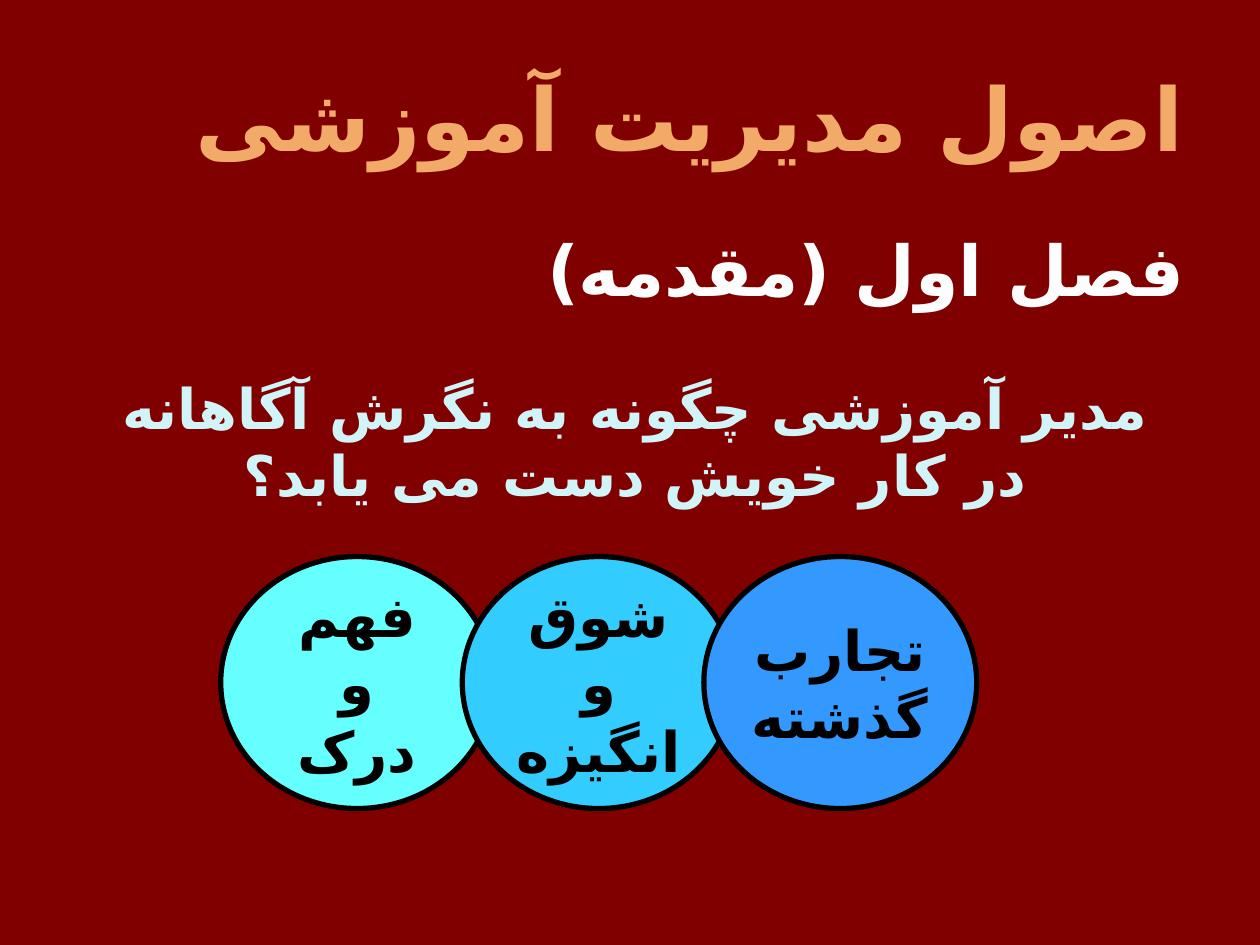
from lxml import etree
from pptx import Presentation
from pptx.dml.color import RGBColor
from pptx.enum.shapes import MSO_SHAPE
from pptx.enum.text import MSO_ANCHOR, PP_ALIGN
from pptx.oxml.ns import qn
from pptx.util import Cm, Pt

OVAL = MSO_SHAPE.OVAL
TOP, MIDDLE = MSO_ANCHOR.TOP, MSO_ANCHOR.MIDDLE
RIGHT, CENTER = PP_ALIGN.RIGHT, PP_ALIGN.CENTER

FONT = "Cabin"
PERSIAN_FONT = "DejaVu Sans"  # Cabin has no Persian letters
COLORS = {
    "background": "800000",
    "title": "F2AA68",
    "chapter": "FDFDFD",
    "question": "D1F4F9",
    "outline": "000000",
    "understanding": "66FFFF",
    "motivation": "33CCFF",
    "experience": "3399FF",
}

# Overlapping circles, left to right
CIRCLES = [
    ("understanding", "فهم\nو\nدرک"),
    ("motivation", "شوق\nو\nانگیزه"),
    ("experience", "تجارب\nگذشته"),
]
CIRCLE_LEFT, CIRCLE_TOP, CIRCLE_STEP = 4.45, 11.22, 4.87
CIRCLE_WIDTH, CIRCLE_HEIGHT = 5.5, 5.08


def color(name):
    return RGBColor.from_string(COLORS[name])


def write_text(shape, text, size, color_name, align, anchor, wrap=True):
    """Fill a shape with bold right-to-left text."""
    frame = shape.text_frame
    frame.text = text
    frame.word_wrap = wrap
    frame.vertical_anchor = anchor
    for para in frame.paragraphs:
        para.alignment = align
        para._p.get_or_add_pPr().set("rtl", "1")
        for span in para.runs:
            span.font.name = FONT
            span.font.size = Pt(size)
            span.font.bold = True
            span.font.color.rgb = color(color_name)
            properties = span._r.get_or_add_rPr()
            properties.set("lang", "fa-IR")
            script_font = etree.SubElement(properties, qn("a:cs"))
            script_font.set("typeface", PERSIAN_FONT)


def add_title(page, text):
    title = page.shapes.title
    title.left, title.top = Cm(1.27), Cm(0.76)
    title.width, title.height = Cm(22.86), Cm(3.18)
    write_text(title, text, 50, "title", RIGHT, MIDDLE)


def add_text(page, text, left, top, width, height, size, color_name, align):
    box = page.shapes.add_textbox(Cm(left), Cm(top), Cm(width), Cm(height))
    write_text(box, text, size, color_name, align, TOP)


def add_circle(page, position, fill_name, text):
    circle = page.shapes.add_shape(
        OVAL, Cm(CIRCLE_LEFT + position * CIRCLE_STEP), Cm(CIRCLE_TOP),
        Cm(CIRCLE_WIDTH), Cm(CIRCLE_HEIGHT))
    circle.shadow.inherit = False
    circle.fill.solid()
    circle.fill.fore_color.rgb = color(fill_name)
    circle.line.color.rgb = color("outline")
    circle.line.width = Pt(3)
    write_text(circle, text, 32, "outline", CENTER, MIDDLE, wrap=False)


def main():
    deck = Presentation()
    deck.slide_width, deck.slide_height = Cm(25.4), Cm(19.05)
    page = deck.slides.add_slide(deck.slide_layouts[5])
    page.background.fill.solid()
    page.background.fill.fore_color.rgb = color("background")

    # Headings
    add_title(page, "اصول مدیریت آموزشی")
    add_text(page, "فصل اول (مقدمه)",
             1.27, 4.45, 22.86, 12.57, 40, "chapter", RIGHT)

    # Three sources of a conscious attitude
    for position, (fill_name, text) in enumerate(CIRCLES):
        add_circle(page, position, fill_name, text)

    # Question above the circles
    add_text(page, "مدیر آموزشی چگونه به نگرش آگاهانه در کار خویش دست می یابد؟",
             2.12, 7.41, 21.38, 2.96, 32, "question", CENTER)

    deck.save("out.pptx")


if __name__ == "__main__":
    main()
